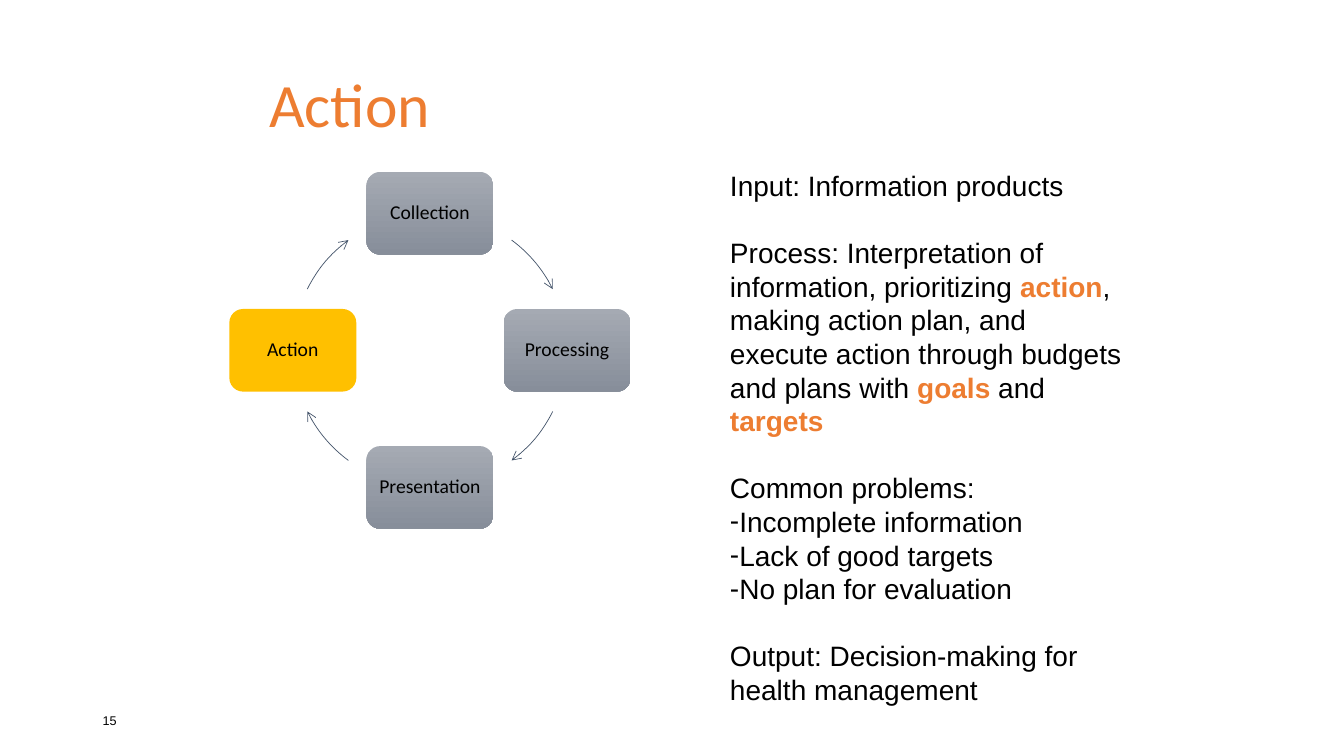
import math

from lxml import etree
from pptx import Presentation
from pptx.dml.color import RGBColor
from pptx.enum.shapes import MSO_SHAPE
from pptx.enum.text import MSO_ANCHOR, MSO_AUTO_SIZE, PP_ALIGN
from pptx.oxml.ns import qn
from pptx.util import Inches, Pt

ROUNDED, ARC = MSO_SHAPE.ROUNDED_RECTANGLE, MSO_SHAPE.ARC
MIDDLE, TOP = MSO_ANCHOR.MIDDLE, MSO_ANCHOR.TOP
LEFT, CENTER = PP_ALIGN.LEFT, PP_ALIGN.CENTER
NO_AUTOFIT = MSO_AUTO_SIZE.NONE

ORANGE = RGBColor(0xED, 0x7D, 0x31)
GOLD = RGBColor(0xFF, 0xC0, 0x00)
GRAY_LIGHT = RGBColor(0xA5, 0xAA, 0xB3)
GRAY_DARK = RGBColor(0x87, 0x8E, 0x9A)
SLATE = RGBColor(0x44, 0x54, 0x6A)
BLACK = RGBColor(0, 0, 0)

# Cycle geometry in inches; arrow angles in degrees, clockwise from the right
CENTER_X, CENTER_Y, RADIUS = 4.265, 3.475, 1.36
NODE_WIDTH, NODE_HEIGHT = 1.26, 0.82
ARROW_MIDDLES, ARROW_HALF_SWEEP = (320, 40, 140, 220), 13.5
ANGLE_UNIT = 0.6

STEPS = ["Collection", "Processing", "Presentation", "Action"]

# Groups of paragraphs; *stars* mark emphasis, a leading hyphen marks a bullet
DETAILS = [
    ["Input: Information products"],
    ["Process: Interpretation of information, prioritizing *action*, making "
     "action plan, and execute action through budgets and plans with *goals* "
     "and *targets*"],
    ["Common problems:", "-Incomplete information", "-Lack of good targets",
     "-No plan for evaluation"],
    ["Output: Decision-making for health management"],
]


class ActionSlide:
    heading_font, body_font = "Calibri", "Arial"

    def __init__(self, deck):
        self.slide = deck.slides.add_slide(deck.slide_layouts[1])
        self.shapes = self.slide.shapes

    def place(self, shape, left, top, width, height):
        shape.left, shape.top = Inches(left), Inches(top)
        shape.width, shape.height = Inches(width), Inches(height)

    def style(self, font, name, size, color, bold=False):
        font.name, font.size, font.bold = name, Pt(size), bold
        font.color.rgb = color

    def title(self, text):
        heading = self.shapes.title
        self.place(heading, 2.57, 0.44, 8.42, 1.25)
        frame = heading.text_frame
        frame.text = text
        frame.vertical_anchor, frame.auto_size = MIDDLE, NO_AUTOFIT
        line = frame.paragraphs[0]
        line.alignment, line.line_spacing = LEFT, 0.9
        self.style(line.runs[0].font, self.heading_font, 44, ORANGE)

    def details(self, groups):
        body = self.slide.placeholders[1]
        self.place(body, 7.14, 1.62, 4.17, 5.49)
        frame = body.text_frame
        frame.vertical_anchor, frame.auto_size = TOP, NO_AUTOFIT
        for group_index, group in enumerate(groups):
            for index, text in enumerate(group):
                first = group_index == index == 0
                paragraph = frame.paragraphs[0] if first else frame.add_paragraph()
                self.detail(paragraph, text)
                starts_group = index == 0 and not first
                paragraph.space_before = Pt(24 if starts_group else 0)

    def detail(self, paragraph, text):
        properties = paragraph._p.get_or_add_pPr()
        properties.set("marL", "0")
        properties.set("indent", "0")
        if text.startswith("-"):
            etree.SubElement(properties, qn("a:buFontTx"))
            etree.SubElement(properties, qn("a:buChar"), char="-")
            text = text[1:]
        else:
            etree.SubElement(properties, qn("a:buNone"))
        self.style(paragraph.font, self.body_font, 20, BLACK)
        paragraph.alignment, paragraph.line_spacing = LEFT, Pt(24)
        for index, part in enumerate(text.split("*")):
            if part:
                run = paragraph.add_run()
                run.text = part
                strong = index % 2 == 1
                self.style(run.font, self.body_font, 20,
                           ORANGE if strong else BLACK, strong)

    def node(self, text, center_x, center_y, highlighted):
        box = self.shapes.add_shape(
            ROUNDED, Inches(center_x - NODE_WIDTH / 2),
            Inches(center_y - NODE_HEIGHT / 2),
            Inches(NODE_WIDTH), Inches(NODE_HEIGHT))
        box.shadow.inherit = False
        box.line.fill.background()
        if highlighted:
            box.fill.solid()
            box.fill.fore_color.rgb = GOLD
        else:
            box.fill.gradient()
            box.fill.gradient_angle = 270
            for stop, color in zip(box.fill.gradient_stops, (GRAY_LIGHT, GRAY_DARK)):
                stop.color.rgb = color
        frame = box.text_frame
        frame.margin_left = frame.margin_right = Inches(0.04)
        frame.margin_top = frame.margin_bottom = Inches(0.04)
        frame.text = text
        frame.vertical_anchor = MIDDLE
        label = frame.paragraphs[0]
        label.alignment, label.line_spacing = CENTER, 0.9
        self.style(label.runs[0].font, self.heading_font, 14, BLACK)

    def arrow(self, middle):
        arc = self.shapes.add_shape(
            ARC, Inches(CENTER_X - RADIUS), Inches(CENTER_Y - RADIUS),
            Inches(2 * RADIUS), Inches(2 * RADIUS))
        arc.shadow.inherit = False
        arc.adjustments[0] = (middle - ARROW_HALF_SWEEP) * ANGLE_UNIT
        arc.adjustments[1] = (middle + ARROW_HALF_SWEEP) * ANGLE_UNIT
        arc.fill.background()
        arc.line.color.rgb, arc.line.width = SLATE, Pt(0.5)
        etree.SubElement(arc.line._get_or_add_ln(), qn("a:tailEnd"), type="arrow")

    def cycle(self, steps, current):
        for index, (step, middle) in enumerate(zip(steps, ARROW_MIDDLES)):
            angle = math.radians(360 / len(steps) * index - 90)
            self.node(step, CENTER_X + RADIUS * math.cos(angle),
                      CENTER_Y + RADIUS * math.sin(angle), step == current)
            self.arrow(middle)

    def page_number(self, number):
        box = self.shapes.add_textbox(
            Inches(0.92), Inches(6.95), Inches(3), Inches(0.4))
        frame = box.text_frame
        frame.word_wrap, frame.vertical_anchor = True, MIDDLE
        frame.text = number
        self.style(frame.paragraphs[0].runs[0].font, self.body_font, 9, BLACK)


def main():
    deck = Presentation()
    deck.slide_width, deck.slide_height = Inches(13.33), Inches(7.5)
    action = ActionSlide(deck)

    # Heading and page number
    action.title("Action")
    action.page_number("15")

    # Information cycle
    action.cycle(STEPS, current="Action")

    # Explanation
    action.details(DETAILS)

    deck.save("out.pptx")


if __name__ == "__main__":
    main()
